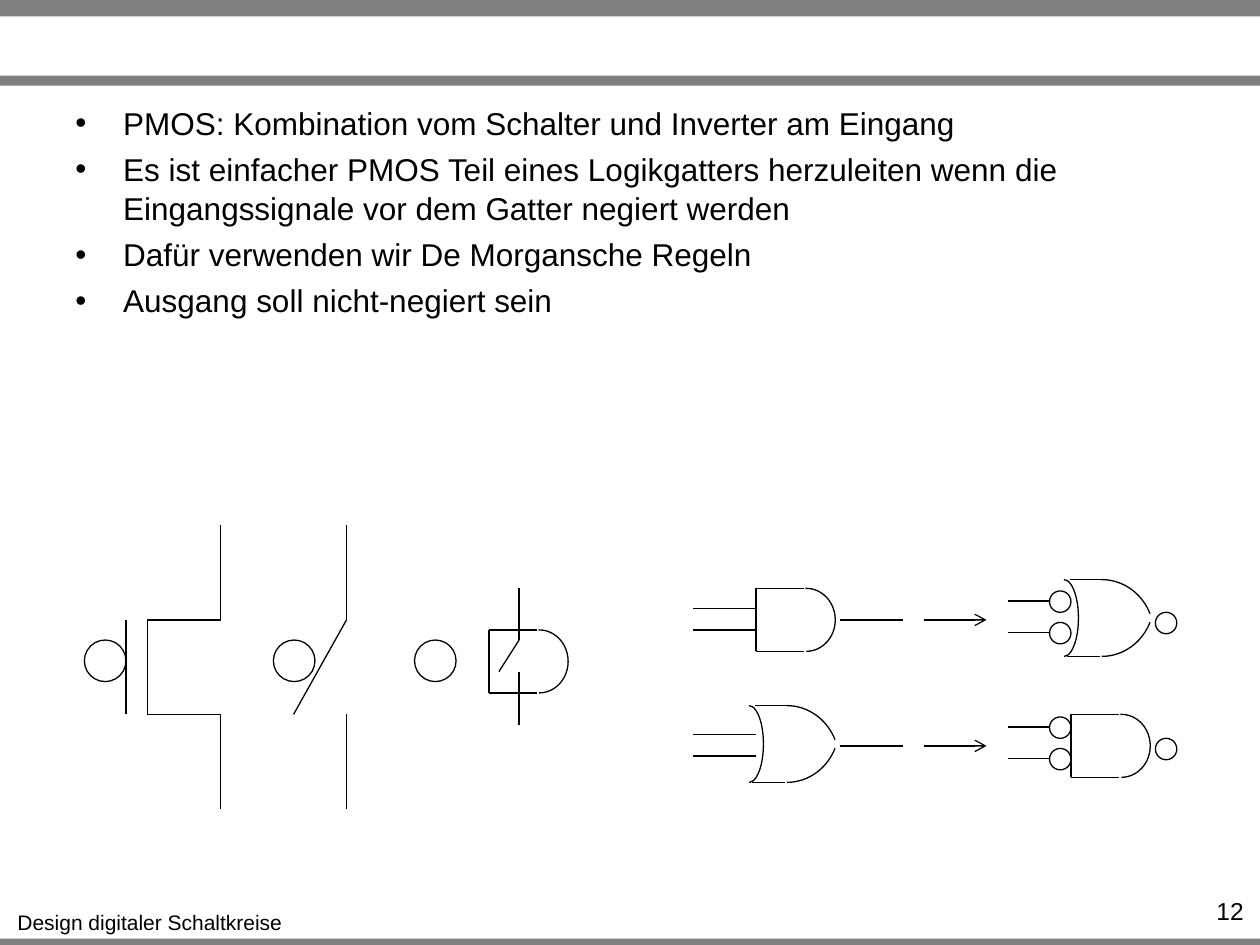
from lxml.etree import SubElement
from pptx import Presentation
from pptx.dml.color import RGBColor
from pptx.enum.shapes import MSO_CONNECTOR, MSO_SHAPE
from pptx.enum.text import PP_ALIGN
from pptx.oxml.ns import qn
from pptx.util import Inches, Pt

COLORS = {"bar": "808080", "ink": "000000", "paper": "FFFFFF"}
FONT = "Arial"
BULLETS = [
    "PMOS: Kombination vom Schalter und Inverter am Eingang",
    "Es ist einfacher PMOS Teil eines Logikgatters herzuleiten wenn die "
    "Eingangssignale vor dem Gatter negiert werden",
    "Dafür verwenden wir De Morgansche Regeln",
    "Ausgang soll nicht-negiert sein",
]


def color(name):
    return RGBColor.from_string(COLORS[name])


def add_bar(shapes, y, h):
    sp = shapes.add_shape(MSO_SHAPE.RECTANGLE, 0, Inches(y), Inches(10), Inches(h))
    sp.shadow.inherit = False
    sp.fill.solid()
    sp.fill.fore_color.rgb = color("bar")
    sp.line.fill.background()


def add_run(p, text, size):
    r = p.add_run()
    r.text = text
    r.font.name = FONT
    r.font.size = Pt(size)
    r.font.color.rgb = color("ink")


def add_text(shapes, box, text, size, align, wrap=True):
    tf = shapes.add_textbox(*map(Inches, box)).text_frame
    tf.word_wrap = wrap
    p = tf.paragraphs[0]
    p.alignment = align
    add_run(p, text, size)


def add_bullets(shapes, box, items, size):
    tf = shapes.add_textbox(*map(Inches, box)).text_frame
    tf.word_wrap = True
    for i, item in enumerate(items):
        p = tf.add_paragraph() if i else tf.paragraphs[0]
        pPr = p._p.get_or_add_pPr()
        pPr.set("marL", str(Inches(0.38)))
        pPr.set("indent", str(-Inches(0.38)))
        SubElement(pPr, qn("a:buFont")).set("typeface", FONT)
        SubElement(pPr, qn("a:buChar")).set("char", "•")
        p.line_spacing = 1.05
        if i:
            p.space_before = Pt(size * 0.2)
        add_run(p, item, size)


def outline(sp):
    sp.line.color.rgb = color("ink")
    sp.line.width = Pt(0.75)


def add_line(shapes, x1, y1, x2, y2, arrow=False):
    cx = shapes.add_connector(MSO_CONNECTOR.STRAIGHT, *map(Inches, (x1, y1, x2, y2)))
    outline(cx)
    if arrow:
        SubElement(cx.line._get_or_add_ln(), qn("a:tailEnd")).set("type", "arrow")
    SubElement(cx._element.spPr, qn("a:effectLst"))


def add_circle(shapes, x, y, d):
    sp = shapes.add_shape(MSO_SHAPE.OVAL, *map(Inches, (x, y, d, d)))
    sp.shadow.inherit = False
    sp.fill.solid()
    sp.fill.fore_color.rgb = color("paper")
    outline(sp)


def add_arc(shapes, x, y, w, h, end, flip=False):
    """Arc from the top of its ellipse clockwise to end, in degrees."""
    sp = shapes.add_shape(MSO_SHAPE.ARC, *map(Inches, (x, y, w, h)))
    sp.shadow.inherit = False
    sp.fill.background()
    sp.adjustments[0] = 162
    sp.adjustments[1] = end * 0.6
    if flip:
        sp._element.spPr.find(qn("a:xfrm")).set("flipV", "1")
    outline(sp)


def add_and_gate(shapes, x, cy):
    g = shapes.add_group_shape().shapes
    top, bottom = cy - 0.25, cy + 0.25
    for y in (top, bottom):
        add_line(g, x, y, x + 0.38, y)
    add_arc(g, x + 0.17, top, 0.46, 0.5, 91.5, flip=True)
    add_line(g, x, top, x, bottom)


def add_or_gate(shapes, x, cy):
    g = shapes.add_group_shape().shapes
    top, bottom = cy - 0.32, cy + 0.29
    add_arc(g, x, top, 0.23, 0.61, 89.8)
    add_arc(g, x, top, 0.83, 0.88, 336.14)
    add_line(g, x + 0.42, top, x + 0.16, top)
    add_line(g, x + 0.4, bottom, x + 0.14, bottom)
    add_arc(g, x, bottom - 0.88, 0.83, 0.88, 336.14, flip=True)


def add_transistor(shapes):
    add_circle(shapes, 0.67, 5.08, 0.33)
    for x in (1, 1.17):
        add_line(shapes, x, 4.92, x, 5.67)
    for y in (4.92, 5.67):
        add_line(shapes, 1.17, y, 1.75, y)
    add_leads(shapes, 1.75)


def add_leads(shapes, x):
    for y in (4.17, 5.67):
        add_line(shapes, x, y, x, y + 0.75)


def add_switch(shapes):
    add_circle(shapes, 2.17, 5.08, 0.33)
    add_line(shapes, 2.75, 4.92, 2.33, 5.67)
    add_leads(shapes, 2.75)


def add_switch_gate(shapes):
    add_and_gate(shapes, 3.88, 5.25)
    add_circle(shapes, 3.29, 5.08, 0.33)
    add_line(shapes, 4.12, 5.33, 4.12, 5.75)
    add_line(shapes, 4.12, 5.08, 3.96, 5.33)
    add_line(shapes, 4.12, 4.67, 4.12, 5.08)


def add_de_morgan_rule(shapes, cy):
    """Wiring of one rule: plain gate, arrow, gate with negated pins."""
    for y in (cy + 0.08, cy - 0.09):
        add_line(shapes, 5.5, y, 6, y)
    add_line(shapes, 6.67, cy, 7.17, cy)
    add_line(shapes, 7.33, cy, 7.83, cy, arrow=True)
    for y in (cy - 0.15, cy + 0.1):
        add_line(shapes, 8, y, 8.5, y)
        add_circle(shapes, 8.33, y - 0.08, 0.17)
    add_circle(shapes, 9.17, cy - 0.06, 0.17)


def main():
    prs = Presentation()
    prs.slide_width, prs.slide_height = Inches(10), Inches(7.5)
    s = prs.slides.add_slide(prs.slide_layouts[6])
    shapes = s.shapes

    for y, h in ((7.45, 0.08), (0, 0.13), (0.6, 0.08)):
        add_bar(shapes, y, h)
    add_text(shapes, (0.03, 7.17, 2.32, 0.3), "Design digitaler Schaltkreise",
             12, PP_ALIGN.CENTER, wrap=False)
    add_bullets(shapes, (0.5, 0.76, 9, 0.74), BULLETS, 18)
    add_text(shapes, (9.1, 7.06, 0.87, 0.24), "12", 14, PP_ALIGN.RIGHT)

    add_transistor(shapes)
    add_switch(shapes)
    add_switch_gate(shapes)

    and_row, or_row = 4.92, 5.92
    for cy in (and_row, or_row):
        add_de_morgan_rule(shapes, cy)
    add_and_gate(shapes, 6, and_row)
    add_or_gate(shapes, 8.33, and_row)
    add_or_gate(shapes, 5.83, or_row)
    add_and_gate(shapes, 8.5, or_row)

    prs.save("out.pptx")


if __name__ == "__main__":
    main()
